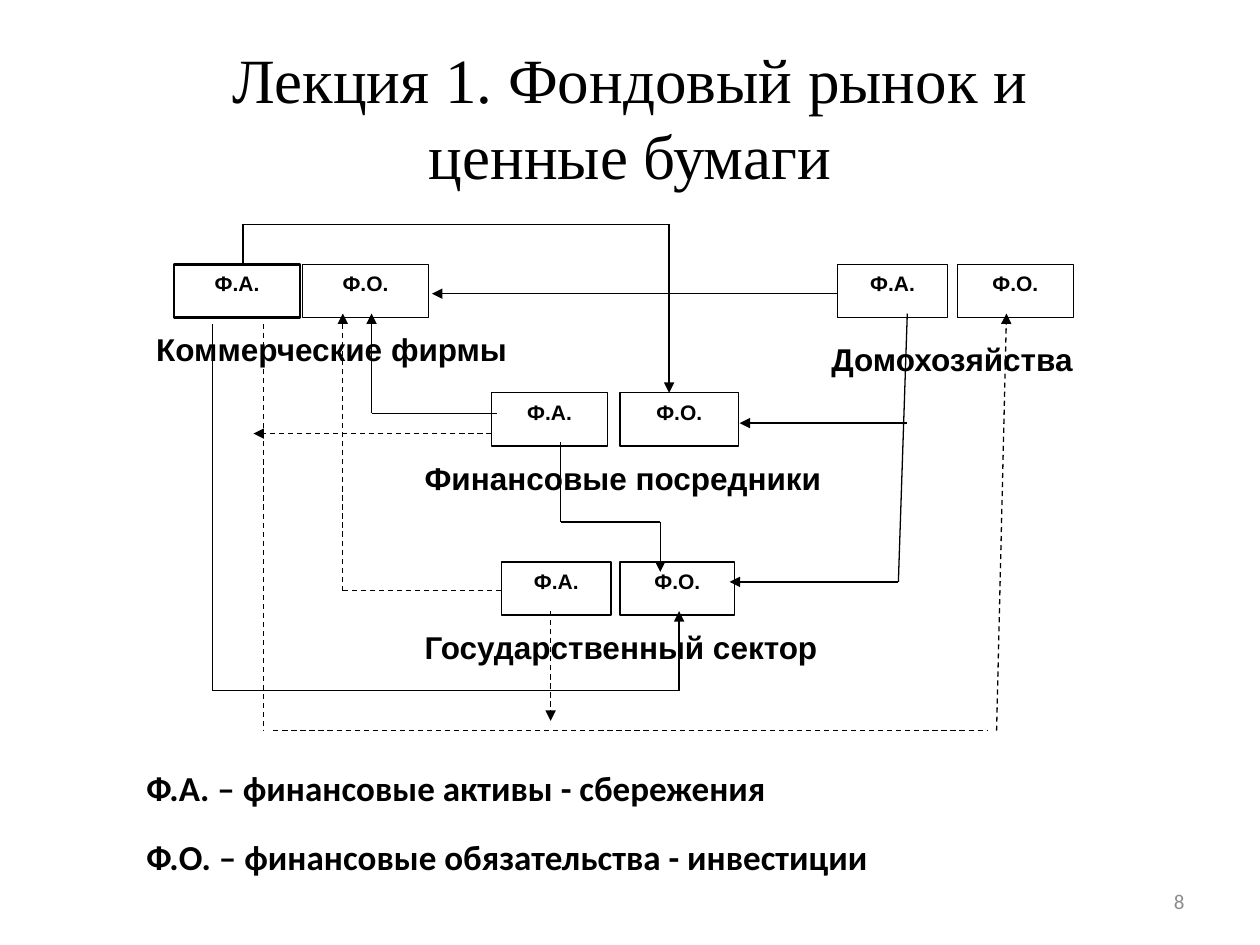
import pptx
import pptx.util
import pptx.dml.color
import pptx.enum.dml
import pptx.enum.shapes
import pptx.enum.text
import pptx.oxml
import pptx.oxml.ns
from pptx.util import Cm

COLOURS = {"ink": "000000", "paper": "FFFFFF", "number": "8C8C8C"}
ALIGN = pptx.enum.text.PP_ALIGN
ANCHOR = pptx.enum.text.MSO_ANCHOR
BOX_HEIGHT = 1.07
LABEL_HEIGHT = 1.02

SECTORS = [
    ("Коммерческие фирмы", (0.81, 0.83), (2.54, 2.54), 0.05, (-0.61, 1.2), 7.67, 1.5),
    ("Домохозяйства", (14.19, 0.83), (2.21, 2.34), 0.2, (-0.38, 1.4), 5.44, 0.75),
    ("Финансовые посредники", (7.21, 3.42), (2.34, 2.39), 0.25, (-1.6, 1.2), 8.59, 0.75),
    ("Государственный сектор", (7.41, 6.83), (2.21, 2.31), 0.18, (-1.8, 1.2), 8.51, 0.75),
]

SOLID_FLOWS = [
    [(2.2, 0.86), (2.2, 0.02), (10.79, 0.02), (10.79, 3.42)],
    [(1.59, 2.03), (1.59, 9.42), (10.99, 9.42), (10.99, 7.82)],
    [(14.19, 1.42), (6.01, 1.42)],
    [(7.31, 3.83), (4.79, 3.83), (4.79, 1.82)],
    [(15.59, 4.03), (12.21, 4.03)],
    [(15.59, 1.82), (15.41, 7.23), (12.01, 7.23)],
    [(8.6, 4.42), (8.6, 6.02), (10.61, 6.02), (10.61, 7.03)],
]

DASHED_FLOWS = [
    [(7.41, 7.41), (4.21, 7.41), (4.21, 1.82)],
    [(7.21, 4.24), (2.41, 4.24)],
    [(8.4, 7.82), (8.4, 10.03)],
    [(17.39, 10.23), (17.59, 1.82)],
]

DASHED_LINKS = [
    [(2.61, 2.03), (2.61, 10.23)],
    [(2.81, 10.23), (17.19, 10.23)],
]


def colour(name):
    return pptx.dml.color.RGBColor.from_string(COLOURS[name])


def write(frame, text, size, face, bold=False, align=ALIGN.LEFT, anchor=ANCHOR.TOP,
          ink="ink", wrap=True):
    frame.word_wrap = wrap
    frame.vertical_anchor = anchor
    para = frame.paragraphs[0]
    para.alignment = align
    span = para.add_run()
    span.text = text
    span.font.size = pptx.util.Pt(size)
    span.font.name = face
    span.font.bold = bold
    span.font.color.rgb = colour(ink)


def add_text(page, left, top, width, height, text, size, face, **style):
    box = page.shapes.add_textbox(Cm(left), Cm(top), Cm(width), Cm(height))
    write(box.text_frame, text, size, face, **style)


def add_fund_box(page, left, top, width, text, outline):
    box = page.shapes.add_shape(pptx.enum.shapes.MSO_SHAPE.RECTANGLE,
                                Cm(left), Cm(top), Cm(width), Cm(BOX_HEIGHT))
    box.shadow.inherit = False
    box.fill.solid()
    box.fill.fore_color.rgb = colour("paper")
    box.line.color.rgb = colour("ink")
    box.line.width = pptx.util.Pt(outline)
    write(box.text_frame, text, 12, "Arial", bold=True, align=ALIGN.CENTER)


def add_sector_boxes(page, left, top, widths, gap, outline):
    add_fund_box(page, left + widths[0] + gap, top, widths[1], "Ф.О.", 0.75)
    add_fund_box(page, left, top, widths[0], "Ф.А.", outline)


def add_flow(page, left, top, points, dashed=False, arrow=True):
    for start, end in zip(points, points[1:]):
        line = page.shapes.add_connector(
            pptx.enum.shapes.MSO_CONNECTOR.STRAIGHT,
            Cm(left + start[0]), Cm(top + start[1]), Cm(left + end[0]), Cm(top + end[1]))
        line.line.color.rgb = colour("ink")
        line.line.width = pptx.util.Pt(0.75)
        if dashed:
            line.line.dash_style = pptx.enum.dml.MSO_LINE.DASH
        if arrow and end == points[-1]:
            tail = pptx.oxml.parse_xml(
                f'<a:tailEnd {pptx.oxml.ns.nsdecls("a")} type="triangle"/>')
            line.line._get_or_add_ln().append(tail)
        line._element.spPr.append(
            pptx.oxml.parse_xml(f'<a:effectLst {pptx.oxml.ns.nsdecls("a")}/>'))


def add_diagram(page, left, top):
    for name, (x, y), widths, gap, shift, width, outline in SECTORS:
        add_sector_boxes(page, left + x, top + y, widths, gap, outline)
    for points in SOLID_FLOWS:
        add_flow(page, left, top, points)
    for points in DASHED_FLOWS:
        add_flow(page, left, top, points, dashed=True)
    for points in DASHED_LINKS:
        add_flow(page, left, top, points, dashed=True, arrow=False)
    for name, (x, y), widths, gap, shift, width, outline in SECTORS:
        add_text(page, left + x + shift[0], top + y + shift[1], width, LABEL_HEIGHT,
                 name, 18, "Arial", bold=True, wrap=False)


def add_legend(page, left, top, width):
    entries = ["Ф.А. – финансовые активы - сбережения",
               "Ф.О. – финансовые обязательства - инвестиции"]
    for row, text in enumerate(entries):
        add_text(page, left, top + row * 1.4, width, 1.11, text, 20, "Calibri", bold=True)


def add_title(page, left, top, width, height):
    add_text(page, left, top, width, height, "Лекция 1. Фондовый рынок и ценные бумаги",
             36, "Times New Roman", align=ALIGN.CENTER, anchor=ANCHOR.MIDDLE)


def add_page_number(page, left, top, width, height):
    add_text(page, left, top, width, height, "8", 12, "Calibri",
             align=ALIGN.RIGHT, anchor=ANCHOR.MIDDLE, ink="number")


def main():
    deck = pptx.Presentation()
    deck.slide_width = Cm(25.4)
    deck.slide_height = Cm(19.05)
    page = deck.slides.add_slide(deck.slide_layouts[6])
    add_diagram(page, 2.7, 4.5)
    add_page_number(page, 18.2, 17.65, 5.93, 1.02)
    add_legend(page, 2.7, 15.32, 15.8)
    add_title(page, 2.5, 0.76, 20.4, 3.18)
    deck.save("out.pptx")


if __name__ == "__main__":
    main()
